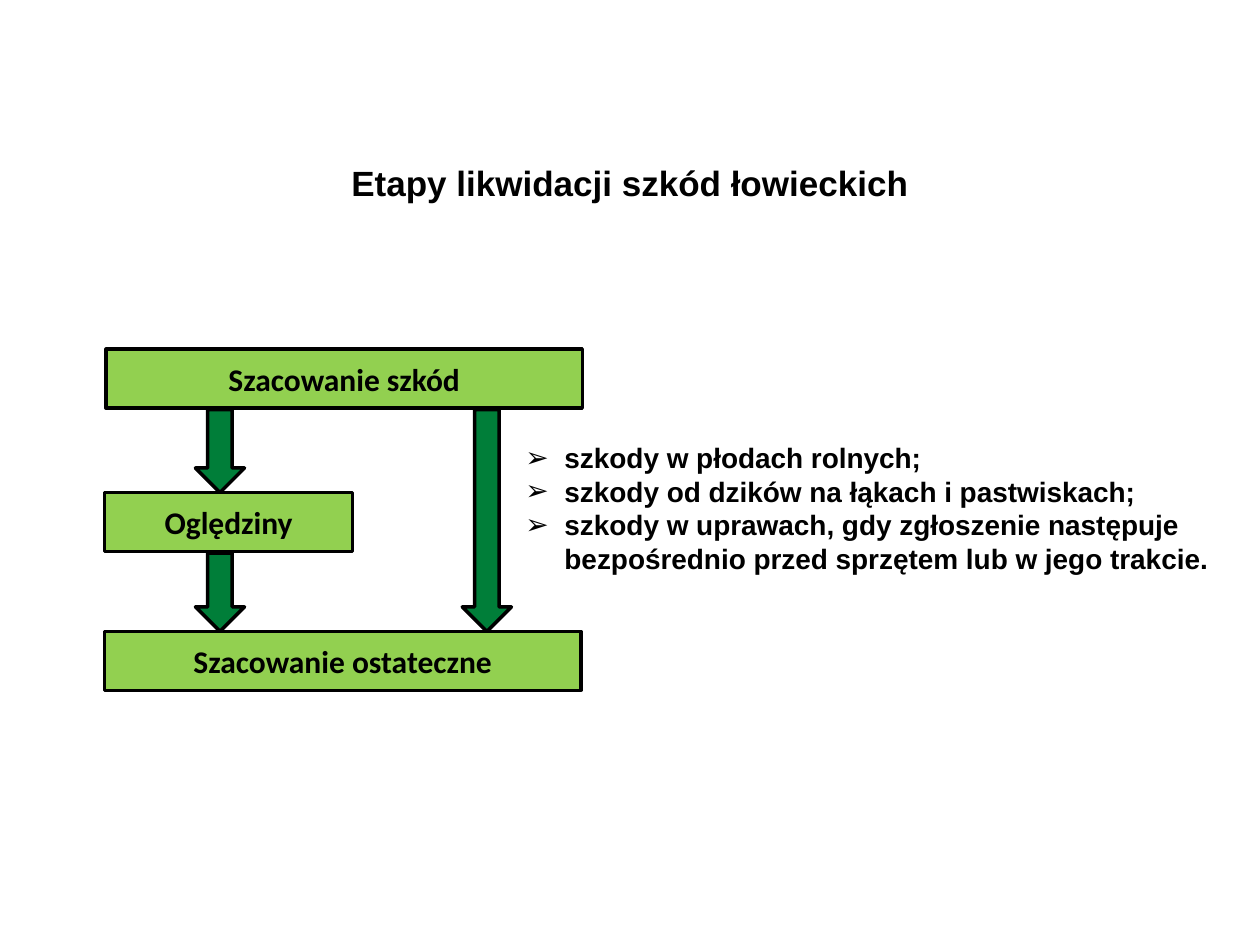
from lxml.etree import SubElement
from pptx import Presentation
from pptx.dml.color import RGBColor
from pptx.enum.shapes import MSO_SHAPE
from pptx.enum.text import MSO_ANCHOR, MSO_AUTO_SIZE, PP_ALIGN
from pptx.oxml.ns import qn
from pptx.util import Cm, Pt

BLACK, LIME, GREEN = "000000", "92D050", "007E39"
BOX_HEIGHT = 1.19
ARROW_WIDTH = 0.99


def color(hex_string):
    """Turn a hex string into a colour."""
    return RGBColor.from_string(hex_string)


def add_bullet(paragraph, character, indent):
    """Give a paragraph a hanging bullet."""
    properties = paragraph._p.get_or_add_pPr()
    properties.set("marL", str(Cm(indent)))
    properties.set("indent", str(-Cm(indent)))
    SubElement(properties, qn("a:buFont")).set("typeface", "Arial")
    SubElement(properties, qn("a:buChar")).set("char", character)


def write_text(shape, *lines, size=18, font="Arial", align=PP_ALIGN.LEFT,
               anchor=MSO_ANCHOR.TOP, bullet=None, indent=0.79):
    """Write bold black lines into a shape, one paragraph each."""
    frame = shape.text_frame
    frame.word_wrap = True
    frame.auto_size = MSO_AUTO_SIZE.NONE
    frame.vertical_anchor = anchor
    for index, line in enumerate(lines):
        paragraph = frame.add_paragraph() if index else frame.paragraphs[0]
        paragraph.alignment = align
        if bullet:
            add_bullet(paragraph, bullet, indent)
        run = paragraph.add_run()
        run.text = line
        run.font.name = font
        run.font.size = Pt(size)
        run.font.bold = True
        run.font.color.rgb = color(BLACK)


def add_outlined(slide, kind, left, top, width, height, fill):
    """Add a filled preset shape with a black outline."""
    shape = slide.shapes.add_shape(kind, Cm(left), Cm(top), Cm(width), Cm(height))
    shape.shadow.inherit = False
    shape.fill.solid()
    shape.fill.fore_color.rgb = color(fill)
    shape.line.color.rgb = color(BLACK)
    shape.line.width = Pt(2)
    return shape


def place_title(slide, left, top, width, height):
    """Place and format the slide title."""
    title = slide.shapes.title
    title.left, title.top, title.width, title.height = map(Cm, (left, top, width, height))
    write_text(title, "Etapy likwidacji szkód łowieckich", size=20,
               align=PP_ALIGN.CENTER)


def draw_stages(slide, left, top, width):
    """Draw the three stages and the arrows between them."""
    stages = [
        ("Szacowanie szkód", 0.03, 0, width),
        ("Oględziny", 0, 2.89, 5),
        ("Szacowanie ostateczne", 0, 5.69, width),
    ]
    for label, x, y, box_width in stages:
        box = add_outlined(slide, MSO_SHAPE.RECTANGLE, left + x, top + y,
                           box_width, BOX_HEIGHT, LIME)
        write_text(box, label, font="Calibri", align=PP_ALIGN.CENTER,
                   anchor=MSO_ANCHOR.MIDDLE)
    first, inspection, final = [y for _, _, y, _ in stages]
    for x, start, end in [(1.83, first, inspection), (1.83, inspection, final),
                          (7.21, first, final)]:
        arrow_top = start + BOX_HEIGHT + 0.03
        add_outlined(slide, MSO_SHAPE.DOWN_ARROW, left + x, top + arrow_top,
                     ARROW_WIDTH, end - arrow_top, GREEN)


def add_damage_list(slide, left, top, width, height):
    """Add the bulleted list of damage settled without inspection."""
    box = slide.shapes.add_textbox(Cm(left), Cm(top), Cm(width), Cm(height))
    write_text(
        box,
        "szkody w płodach rolnych;",
        "szkody od dzików na łąkach i pastwiskach;",
        "szkody w uprawach, gdy zgłoszenie następuje bezpośrednio przed "
        "sprzętem lub w jego trakcie.",
        size=16, bullet="➢",
    )


def main():
    """Build and save the presentation."""
    presentation = Presentation()
    presentation.slide_width, presentation.slide_height = Cm(25.4), Cm(19.05)
    slide = presentation.slides.add_slide(presentation.slide_layouts[5])
    place_title(slide, 0, 3.12, 25.4, 1.12)
    draw_stages(slide, 2.11, 7.04, 9.6)
    add_damage_list(slide, 10.34, 8.76, 14.55, 3)
    presentation.save("out.pptx")


if __name__ == "__main__":
    main()
